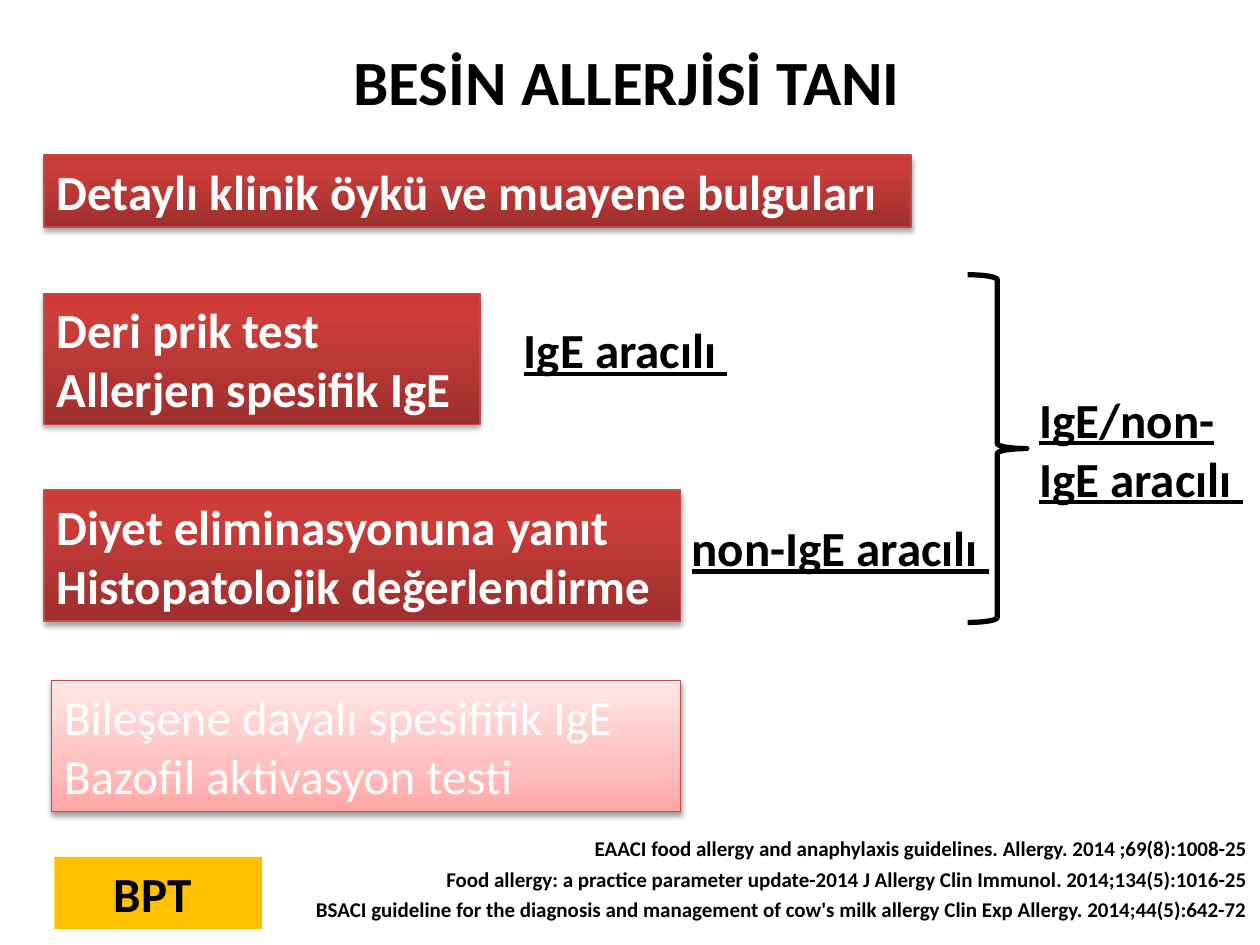
import pptx
import pptx.util
import pptx.dml.color
import pptx.enum.shapes
import pptx.enum.text
import pptx.oxml.ns
from lxml import etree

Pt = pptx.util.Pt
qn = pptx.oxml.ns.qn
RGB = pptx.dml.color.RGBColor.from_string
SHAPE = pptx.enum.shapes.MSO_SHAPE
ALIGN = pptx.enum.text.PP_ALIGN

COLORS = {"text": "000000", "light": "FFFFFF", "border": "BF4C48",
          "amber": "FFC000", "shadow": "000000"}
RED = [(0, "9C2F2D"), (80, "CB3E3A"), (100, "CE3B37")]
PINK = [(0, "FFA6A5"), (35, "FFC0BF"), (100, "FFE7E7")]
ONE_LINE, TWO_LINES = 41.2, 74.9


def write(sp, lines, size=28, color="text", align=ALIGN.LEFT, wrap=False, **font):
    tf = sp.text_frame
    frame = {"word_wrap": wrap, "vertical_anchor": pptx.enum.text.MSO_ANCHOR.TOP,
             "auto_size": pptx.enum.text.MSO_AUTO_SIZE.SHAPE_TO_FIT_TEXT}
    for name, value in frame.items():
        setattr(tf, name, value)
    style = {"name": "Calibri", "size": Pt(size), "bold": True, **font}
    for i, line in enumerate(lines):
        p = tf.add_paragraph() if i else tf.paragraphs[0]
        p.alignment = align
        r = p.add_run()
        r.text = line
        for name, value in style.items():
            setattr(r.font, name, value)
        r.font.color.rgb = RGB(COLORS[color])


def add_text(s, box, lines, **style):
    write(s.shapes.add_textbox(*map(Pt, box)), lines, **style)


def add_rect(s, box):
    sp = s.shapes.add_shape(SHAPE.RECTANGLE, *map(Pt, box))
    sp.shadow.inherit = False
    return sp


def fill_gradient(sp, stops):
    sp.fill.gradient()
    sp.fill.gradient_angle = 90
    stop_list = sp._element.spPr.find(qn("a:gradFill")).find(qn("a:gsLst"))
    for gs in list(stop_list):
        stop_list.remove(gs)
    for pos, color in stops:
        gs = etree.SubElement(stop_list, qn("a:gs"), pos=str(pos * 1000))
        etree.SubElement(gs, qn("a:srgbClr"), val=color)


def add_shadow(sp, alpha, distance):
    effects = sp._element.spPr.find(qn("a:effectLst"))
    shadow = etree.SubElement(effects, qn("a:outerShdw"), blurRad=str(Pt(3.1)),
                              dist=str(Pt(distance)), dir="5400000", rotWithShape="0")
    color = etree.SubElement(shadow, qn("a:srgbClr"), val=COLORS["shadow"])
    etree.SubElement(color, qn("a:alpha"), val=str(alpha * 1000))


def add_steps(s, left, top):
    """Diagnostic steps; the last, not yet routine, is pale."""
    steps = [
        (0, 0, 495.4, ["Detaylı klinik öykü ve muayene bulguları"], True),
        (0, 79.2, 249.1, ["Deri prik test", "Allerjen spesifik IgE"], True),
        (0, 191.5, 363.6, ["Diyet eliminasyonuna yanıt", "Histopatolojik değerlendirme"], True),
        (4.3, 300.2, 359.3, ["Bileşene dayalı spesififik IgE", "Bazofil aktivasyon testi"], False),
    ]
    for x, y, width, lines, routine in steps:
        height = TWO_LINES if len(lines) > 1 else ONE_LINE
        sp = add_rect(s, (left + x, top + y, width, height))
        fill_gradient(sp, RED if routine else PINK)
        sp.line.color.rgb = RGB(COLORS["border"])
        sp.line.width = Pt(0.75)
        add_shadow(sp, *((35, 1.8) if routine else (38, 1.6)))
        write(sp, lines, color="light", bold=routine, wrap=not routine)


def add_challenge(s, box):
    sp = add_rect(s, box)
    sp.fill.solid()
    sp.fill.fore_color.rgb = RGB(COLORS["amber"])
    sp.line.fill.background()
    write(sp, ["BPT "], align=ALIGN.CENTER, wrap=True)


def add_mechanisms(s, left, top):
    """Mechanism labels, joined by a brace to the mixed type."""
    labels = [
        (0, 22.3, 132.5, ONE_LINE, "IgE aracılı ", False),
        (95.8, 135.3, 186.5, ONE_LINE, "non-IgE aracılı ", False),
        (294.5, 61.9, 133.2, TWO_LINES, "IgE/non-IgE aracılı ", True),
    ]
    for x, y, width, height, label, wrap in labels:
        add_text(s, (left + x, top + y, width, height), [label], wrap=wrap, underline=True)
    brace = s.shapes.add_shape(SHAPE.RIGHT_BRACE, Pt(left + 260.7), Pt(top), Pt(33.8), Pt(198.7))
    brace.shadow.inherit = False
    brace.fill.background()
    brace.line.color.rgb = RGB(COLORS["text"])
    brace.line.width = Pt(3)


def add_references(s, right, top, step):
    references = [
        (671.8, "EAACI food allergy and anaphylaxis guidelines. Allergy. 2014 ;69(8):1008-25"),
        (657.4, "Food allergy: a practice parameter update-2014 J Allergy Clin Immunol. "
                "2014;134(5):1016-25"),
        (558.7, "BSACI guideline for the diagnosis and management of cow's milk allergy "
                "Clin Exp Allergy. 2014;44(5):642-72"),
    ]
    for i, (width, line) in enumerate(references):
        add_text(s, (right - width, top + i * step, width, 21.8), [line],
                 size=12, align=ALIGN.RIGHT, wrap=True)


def main():
    prs = pptx.Presentation()
    prs.slide_width, prs.slide_height = Pt(720), Pt(540)
    s = prs.slides.add_slide(prs.slide_layouts[6])
    add_text(s, (187.2, 20.9, 350, 51), ["BESİN ALLERJİSİ TANI "], size=36, align=ALIGN.CENTER)
    add_steps(s, 25.2, 88.6)
    add_challenge(s, (31, 489.6, 118.8, ONE_LINE))
    add_mechanisms(s, 292.3, 157)
    add_references(s, 720, 473.8, 17.6)
    prs.save("out.pptx")


if __name__ == "__main__":
    main()
